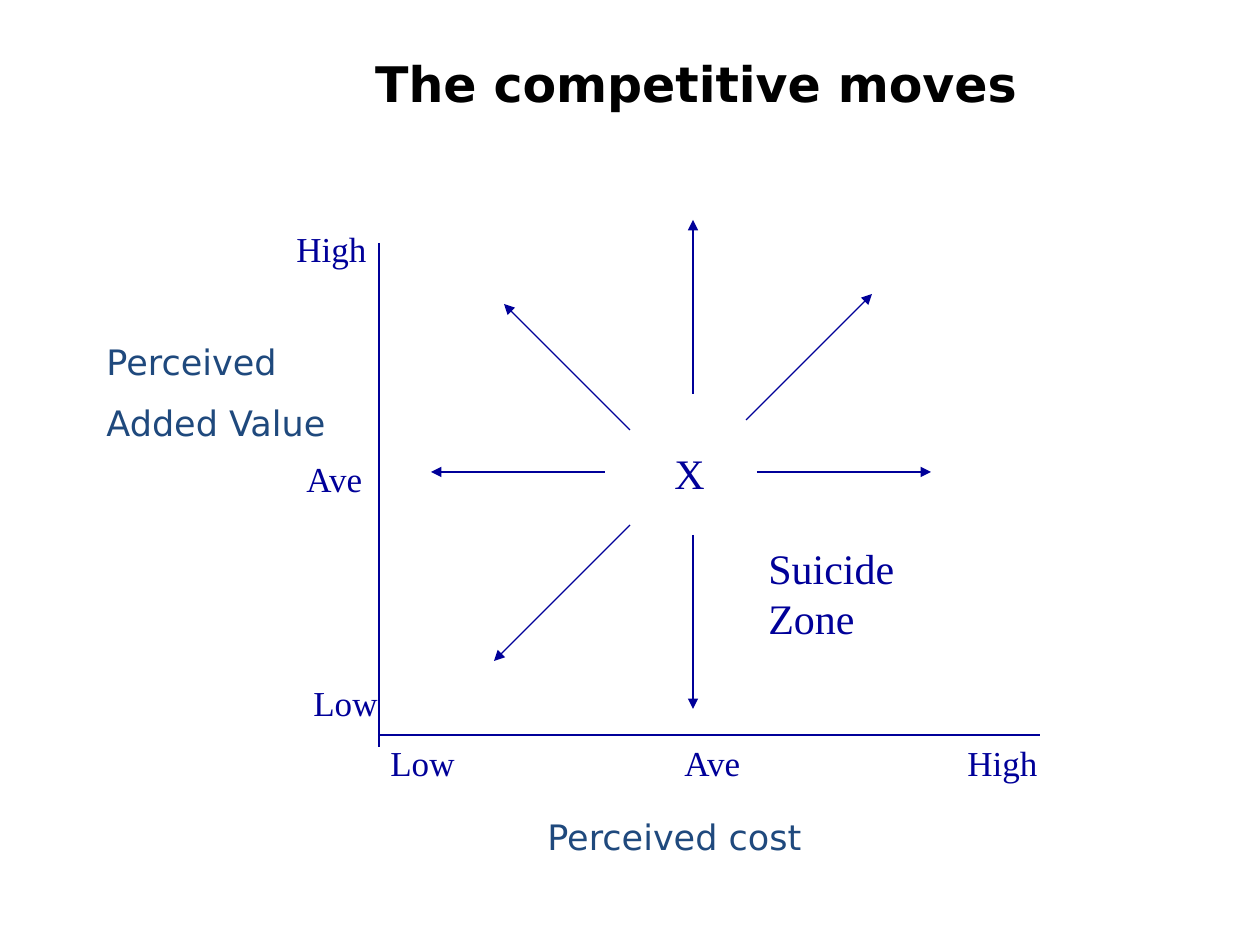
from lxml.etree import SubElement
from pptx import Presentation
from pptx.dml.color import RGBColor
from pptx.enum.shapes import MSO_CONNECTOR
from pptx.enum.text import MSO_ANCHOR, PP_ALIGN
from pptx.oxml.ns import qn
from pptx.util import Emu, Pt

PX = 914400 / 126
COLORS = {"title": "000000", "axis_name": "1F497D", "ink": "000099"}
TITLE = {"name": "DejaVu Sans", "size": Pt(28), "bold": True}
AXIS_NAME = {"name": "DejaVu Sans", "size": Pt(20)}
TICK = {"name": "Times New Roman", "size": Pt(20)}
MARK = {"name": "Times New Roman", "size": Pt(24)}


def px(*lengths):
    return [Emu(round(n * PX)) for n in lengths]


def style_run(r, font, color):
    for key, value in font.items():
        setattr(r.font, key, value)
    r.font.color.rgb = RGBColor.from_string(COLORS[color])


def add_text(slide, box, lines, font, color="ink"):
    tf = slide.shapes.add_textbox(*px(*box)).text_frame
    tf.word_wrap = True
    for i, line in enumerate(lines):
        p = tf.add_paragraph() if i else tf.paragraphs[0]
        if i:
            p.space_before = Pt(11)
        r = p.add_run()
        r.text = line
        style_run(r, font, color)


def add_line(slide, start, end, arrow=False):
    s = slide.shapes.add_connector(MSO_CONNECTOR.STRAIGHT, *px(*start, *end))
    s.line.color.rgb = RGBColor.from_string(COLORS["ink"])
    s.line.width = Pt(0.75)
    if arrow:
        SubElement(s.line._get_or_add_ln(), qn("a:tailEnd"), type="triangle")
    SubElement(s._element.spPr, qn("a:effectLst"))


def add_title(slide, box, text):
    sp = slide.shapes.title
    sp.left, sp.top, sp.width, sp.height = px(*box)
    tf = sp.text_frame
    tf.vertical_anchor = MSO_ANCHOR.MIDDLE
    p = tf.paragraphs[0]
    p.alignment = PP_ALIGN.CENTER
    r = p.add_run()
    r.text = text
    style_run(r, TITLE, "title")


def add_axes(slide, box):
    x, y, w, h = box
    add_line(slide, (x + 1, y), (x + 1, y + h + 12))
    add_line(slide, (x, y + h), (x + w, y + h))

    # Axis names
    add_text(slide, (x - 284, y + 91, 258, 117),
             ["Perceived", "Added Value"], AXIS_NAME, "axis_name")
    add_text(slide, (x + 157, y + h + 74, 315, 54),
             ["Perceived cost"], AXIS_NAME, "axis_name")

    # Tick labels: value axis, then cost axis
    ticks = [("High", -94, -22), ("Ave", -84, 208), ("Low", -77, 432),
             ("Low", 0, h), ("Ave", 294, h), ("High", 577, h)]
    for label, dx, dy in ticks:
        add_text(slide, (x + dx, y + dy, 126, 54), [label], TICK)


def add_moves(slide, box):
    x, y, _, _ = box
    cx, cy = x + 315, y + 229

    # Arrows leading away from the current position: direction, start, length
    moves = [((0, 1), (0, 63), 174), ((1, 0), (64, 0), 174),
             ((0, -1), (0, -78), 174), ((-1, 0), (-88, 0), 174),
             ((-1, 1), (-63, 53), 136), ((-1, -1), (-63, -42), 126),
             ((1, -1), (53, -52), 126)]
    for (ux, uy), (dx, dy), length in moves:
        start = cx + dx, cy + dy
        end = start[0] + ux * length, start[1] + uy * length
        add_line(slide, start, end, arrow=True)

    # Position mark and zone name
    add_text(slide, (cx - 31, cy - 31, 53, 63), ["X"], MARK)
    add_text(slide, (cx + 63, cy + 64, 179, 113), ["Suicide Zone"], MARK)


def main():
    prs = Presentation()
    prs.slide_width, prs.slide_height = px(1260, 945)
    slide = prs.slides.add_slide(prs.slide_layouts[5])
    plot = (378, 243, 662, 492)
    add_title(slide, (159, 29, 1074, 107), "The competitive moves")
    add_axes(slide, plot)
    add_moves(slide, plot)
    prs.save("out.pptx")


if __name__ == "__main__":
    main()
